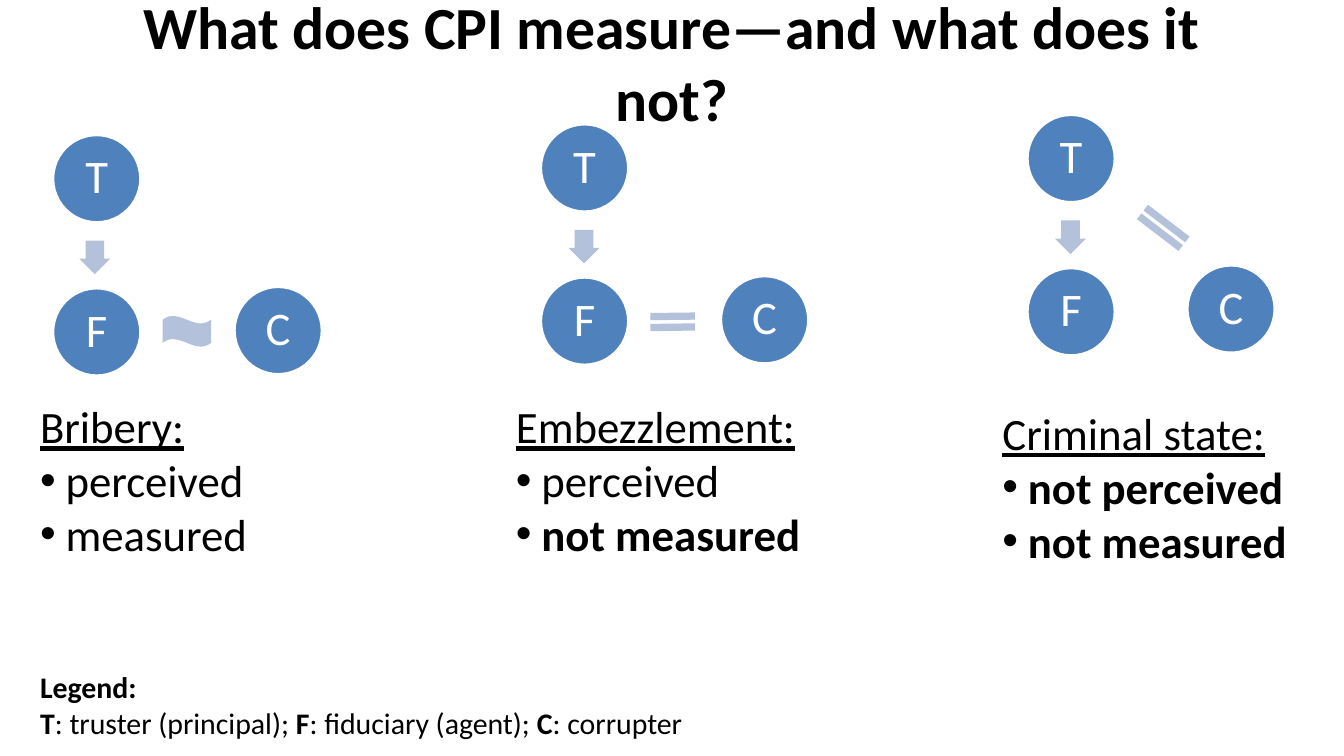
from dataclasses import dataclass

import pptx
import pptx.dml.color
import pptx.enum.shapes
import pptx.enum.text
import pptx.oxml.ns
import pptx.util
from lxml import etree

Inches = pptx.util.Inches
Pt = pptx.util.Pt
SHAPES = pptx.enum.shapes.MSO_SHAPE
ALIGN = pptx.enum.text.PP_ALIGN
ANCHOR = pptx.enum.text.MSO_ANCHOR

FONT = "Calibri"
BLACK, WHITE, BLUE, PALE_BLUE = "000000", "FFFFFF", "4F81BD", "B3C1DB"
SLIDE_WIDTH = 10
CIRCLE_SIZE = 0.66
SYMBOL_HEIGHT = 0.23
FIDUCIARY_DROP = 1.14  # from the truster's top to the fiduciary's top
BULLET_INDENT = 0.19


@dataclass
class Symbol:
    """Sign linking the corrupter to another actor."""
    kind: int
    left: float
    top: float
    width: float
    rotation: float


@dataclass
class Case:
    heading: str
    findings: list[tuple[str, bool]]  # wording, bold
    text_box: tuple[float, float, float, float]
    truster: tuple[float, float]
    corrupter: tuple[float, float]
    arrow_left: float
    symbol: Symbol


CASES = [
    Case("Bribery:", [("perceived", False), ("measured", False)],
         (0.2, 2.92, 3.07, 1.31), (0.39, 1.0), (1.74, 2.13), 0.58,
         Symbol(SHAPES.WAVE, 1.21, 2.35, 0.36, 180)),
    Case("Embezzlement:", [("perceived", False), ("not measured", True)],
         (3.74, 2.92, 2.91, 1.31), (4.02, 0.92), (5.36, 2.05), 4.22,
         Symbol(SHAPES.MATH_EQUAL, 4.78, 2.28, 0.45, 359.3)),
    Case("Criminal state:", [("not perceived", True), ("not measured", True)],
         (7.36, 2.97, 2.91, 1.31), (7.64, 0.85), (8.83, 1.97), 7.84,
         Symbol(SHAPES.MATH_EQUAL, 8.39, 1.58, 0.53, 217.4)),
]

LEGEND = [("T", True), (": truster (principal); ", False),
          ("F", True), (": fiduciary (agent); ", False),
          ("C", True), (": corrupter", False)]


def color(value: str) -> pptx.dml.color.RGBColor:
    return pptx.dml.color.RGBColor.from_string(value)


def format_run(run, size: float, value: str = BLACK, bold: bool = False,
               underline: bool = False) -> None:
    run.font.name = FONT
    run.font.size = Pt(size)
    run.font.color.rgb = color(value)
    run.font.bold = bold
    run.font.underline = underline


def add_text_frame(slide, left: float, top: float, width: float, height: float):
    box = slide.shapes.add_textbox(Inches(left), Inches(top), Inches(width), Inches(height))
    box.text_frame.word_wrap = True
    return box.text_frame


def add_bullet(paragraph) -> None:
    properties = paragraph._p.get_or_add_pPr()
    properties.set("marL", str(Inches(BULLET_INDENT)))
    properties.set("indent", str(-Inches(BULLET_INDENT)))
    font = etree.SubElement(properties, pptx.oxml.ns.qn("a:buFont"))
    font.set("typeface", "Arial")
    bullet = etree.SubElement(properties, pptx.oxml.ns.qn("a:buChar"))
    bullet.set("char", "•")


def add_filled_shape(group, kind: int, left: float, top: float, width: float,
                     height: float, fill: str, rotation: float = 0):
    shape = group.shapes.add_shape(kind, Inches(left), Inches(top), Inches(width), Inches(height))
    shape.shadow.inherit = False
    shape.fill.solid()
    shape.fill.fore_color.rgb = color(fill)
    shape.line.fill.background()
    shape.rotation = rotation
    return shape


def add_actor(group, letter: str, left: float, top: float) -> None:
    circle = add_filled_shape(group, SHAPES.OVAL, left, top, CIRCLE_SIZE, CIRCLE_SIZE, BLUE)
    circle.line.color.rgb = color(WHITE)
    circle.line.width = Pt(2)
    frame = circle.text_frame
    frame.margin_left = frame.margin_right = Inches(0.03)
    frame.margin_top = frame.margin_bottom = Inches(0.03)
    frame.vertical_anchor = ANCHOR.MIDDLE
    frame.text = letter
    paragraph = frame.paragraphs[0]
    paragraph.alignment = ALIGN.CENTER
    paragraph.line_spacing = 0.9
    format_run(paragraph.runs[0], 25, WHITE)


def add_diagram(slide, case: Case) -> None:
    group = slide.shapes.add_group_shape()
    left, top = case.truster
    add_actor(group, "F", left, top + FIDUCIARY_DROP)
    arrow = add_filled_shape(group, SHAPES.RIGHT_ARROW, case.arrow_left, top + 0.8,
                             0.25, SYMBOL_HEIGHT, PALE_BLUE, 90)
    arrow.adjustments[0] = 0.6
    arrow.adjustments[1] = 0.5
    add_actor(group, "T", left, top)
    symbol = case.symbol
    add_filled_shape(group, symbol.kind, symbol.left, symbol.top, symbol.width,
                     SYMBOL_HEIGHT, PALE_BLUE, symbol.rotation)
    add_actor(group, "C", *case.corrupter)


def add_findings(slide, case: Case) -> None:
    frame = add_text_frame(slide, *case.text_box)
    frame.text = case.heading
    format_run(frame.paragraphs[0].runs[0], 24, underline=True)
    for wording, bold in case.findings:
        paragraph = frame.add_paragraph()
        paragraph.text = wording
        add_bullet(paragraph)
        format_run(paragraph.runs[0], 24, bold=bold)


def add_title(slide) -> None:
    frame = add_text_frame(slide, 0.5, 0.23, 9, 0.46)
    frame.vertical_anchor = ANCHOR.MIDDLE
    frame.text = "What does CPI measure—and what does it not?"
    frame.paragraphs[0].alignment = ALIGN.CENTER
    format_run(frame.paragraphs[0].runs[0], 32, bold=True)


def add_legend(slide) -> None:
    frame = add_text_frame(slide, 0.2, 4.93, 9.72, 0.64)
    frame.text = "Legend:"
    format_run(frame.paragraphs[0].runs[0], 16, bold=True)
    paragraph = frame.add_paragraph()
    for wording, bold in LEGEND:
        run = paragraph.add_run()
        run.text = wording
        format_run(run, 16, bold=bold)


def main() -> None:
    presentation = pptx.Presentation()
    # Widescreen, 16:9
    presentation.slide_width = Inches(SLIDE_WIDTH)
    presentation.slide_height = Inches(SLIDE_WIDTH * 9 / 16)
    slide = presentation.slides.add_slide(presentation.slide_layouts[6])

    # Title
    add_title(slide)

    # Diagrams, then the findings below them
    for case in CASES:
        add_diagram(slide, case)
    for case in CASES:
        add_findings(slide, case)

    # Legend
    add_legend(slide)

    presentation.save("out.pptx")


if __name__ == "__main__":
    main()
